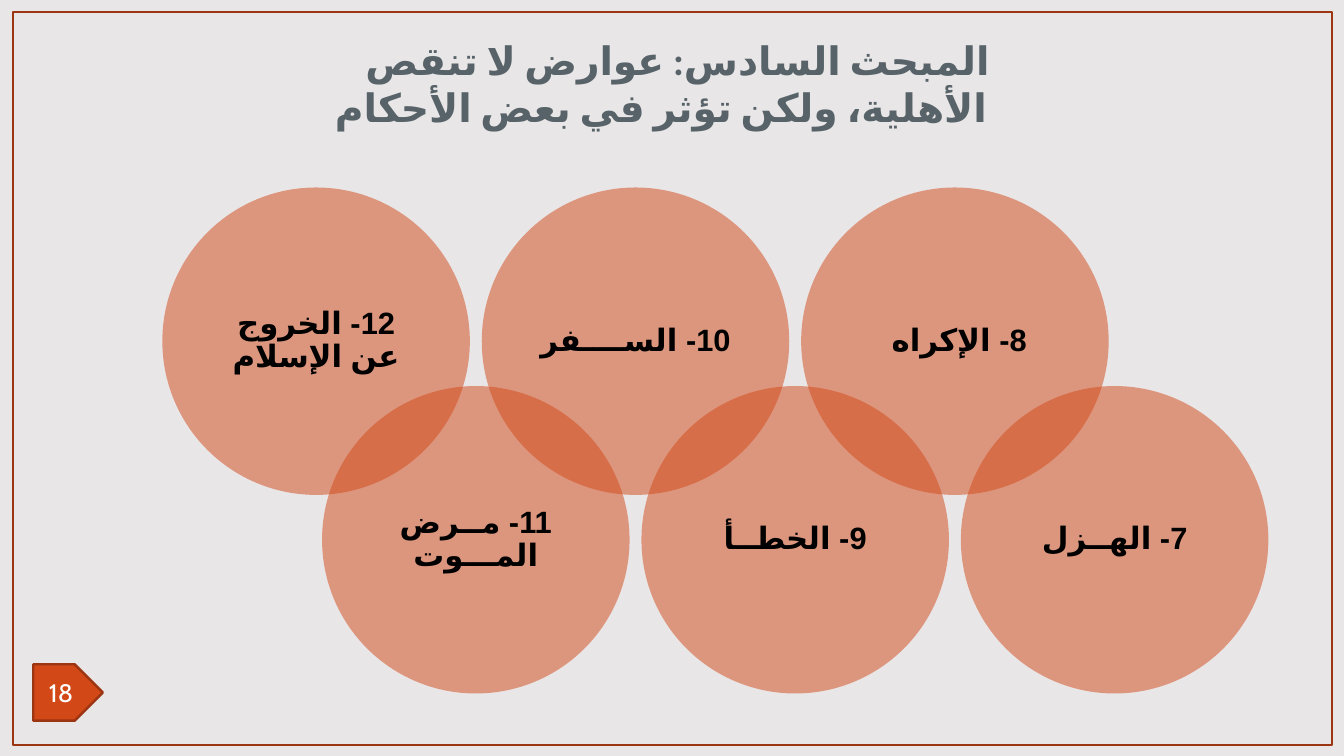
from lxml import etree
from pptx import Presentation
from pptx.dml import color as dml
from pptx.enum import lang, shapes, text
from pptx.oxml import ns
from pptx.util import Inches, Pt

RUST, EDGE, SLATE = "D34817", "9C3511", "576368"
ITEMS = [
    "7- الهــزل",
    "8- الإكراه ",
    "9- الخطــأ",
    "10- الســــفر",
    "11- مــرض المـــوت",
    "12- الخروج عن الإسلام",
]


def paint(target, tint):
    target.rgb = dml.RGBColor.from_string(tint)


def write(shape, words, size, face, tint, bold=True, rtl=True):
    frame = shape.text_frame
    frame.text = words
    frame.word_wrap = True
    frame.auto_size = text.MSO_AUTO_SIZE.NONE
    frame.vertical_anchor = text.MSO_ANCHOR.MIDDLE
    para = frame.paragraphs[0]
    para.alignment = text.PP_ALIGN.CENTER
    if rtl:
        para._p.get_or_add_pPr().set("rtl", "1")
    for run in para.runs:
        run.font.size = Pt(size)
        run.font.bold = bold
        run.font.name = face
        paint(run.font.color, tint)
        if rtl:
            run.font.language_id = lang.MSO_LANGUAGE_ID.ARABIC
        etree.SubElement(run._r.get_or_add_rPr(), ns.qn("a:cs"), typeface=face)
    return para


def draw(slide, kind, box, fill=None, line=None):
    shape = slide.shapes.add_shape(kind, *map(Inches, box))
    shape.shadow.inherit = False
    if fill:
        shape.fill.solid()
        paint(shape.fill.fore_color, fill)
    else:
        shape.fill.background()
    if line:
        paint(shape.line.color, line)
        shape.line.width = Pt(1.75)
    else:
        shape.line.fill.background()
    return shape


def border(slide, box):
    left, top, width, height = box
    draw(slide, shapes.MSO_SHAPE.RECTANGLE, box, line=EDGE)
    tag = draw(slide, shapes.MSO_SHAPE.PENTAGON,
               (left + 0.2, top + height - 0.8, 0.69, 0.56), RUST, EDGE)
    tag.text_frame.margin_left = tag.text_frame.margin_right = 0
    write(tag, "18", 18, "Cabin", "FFFFFF", bold=False, rtl=False)


def heading(slide, box):
    title = slide.shapes.title
    title.left, title.top, title.width, title.height = map(Inches, box)
    para = write(title, "المبحث السادس: عوارض لا تنقص الأهلية، ولكن تؤثر في بعض الأحكام",
                 28, "Calibri", SLATE)
    props = para._p.get_or_add_pPr()
    props.set("marL", str(Inches(0.33)))
    props.set("indent", str(-Inches(0.33)))


def circles(slide, box, size=3.05):
    left, top, width, height = box
    step = (width - size) / (len(ITEMS) - 1)
    for i, words in enumerate(ITEMS):
        x = left + width - size - i * step
        y = top if i % 2 else top + height - size
        disc = draw(slide, shapes.MSO_SHAPE.OVAL, (x, y, size, size), RUST)
        tint = disc.fill._xPr.find(".//" + ns.qn("a:srgbClr"))
        etree.SubElement(tint, ns.qn("a:alpha"), val="50000")
        frame = disc.text_frame
        frame.margin_left = frame.margin_right = Inches(0.09)
        frame.margin_top = frame.margin_bottom = Inches(0.09)
        write(disc, words, 22, "Arial", "000000").line_spacing = 0.9


def main():
    deck = Presentation()
    deck.slide_width, deck.slide_height = Inches(13.33), Inches(7.5)
    slide = deck.slides.add_slide(deck.slide_layouts[5])
    back = slide.background.fill
    back.solid()
    paint(back.fore_color, "E9E6E7")
    border(slide, (0.13, 0.12, 13.08, 7.27))
    heading(slide, (2.96, 0.31, 7.52, 1.03))
    circles(slide, (1.61, 1.86, 10.97, 5.02))
    deck.save("out.pptx")


if __name__ == "__main__":
    main()
